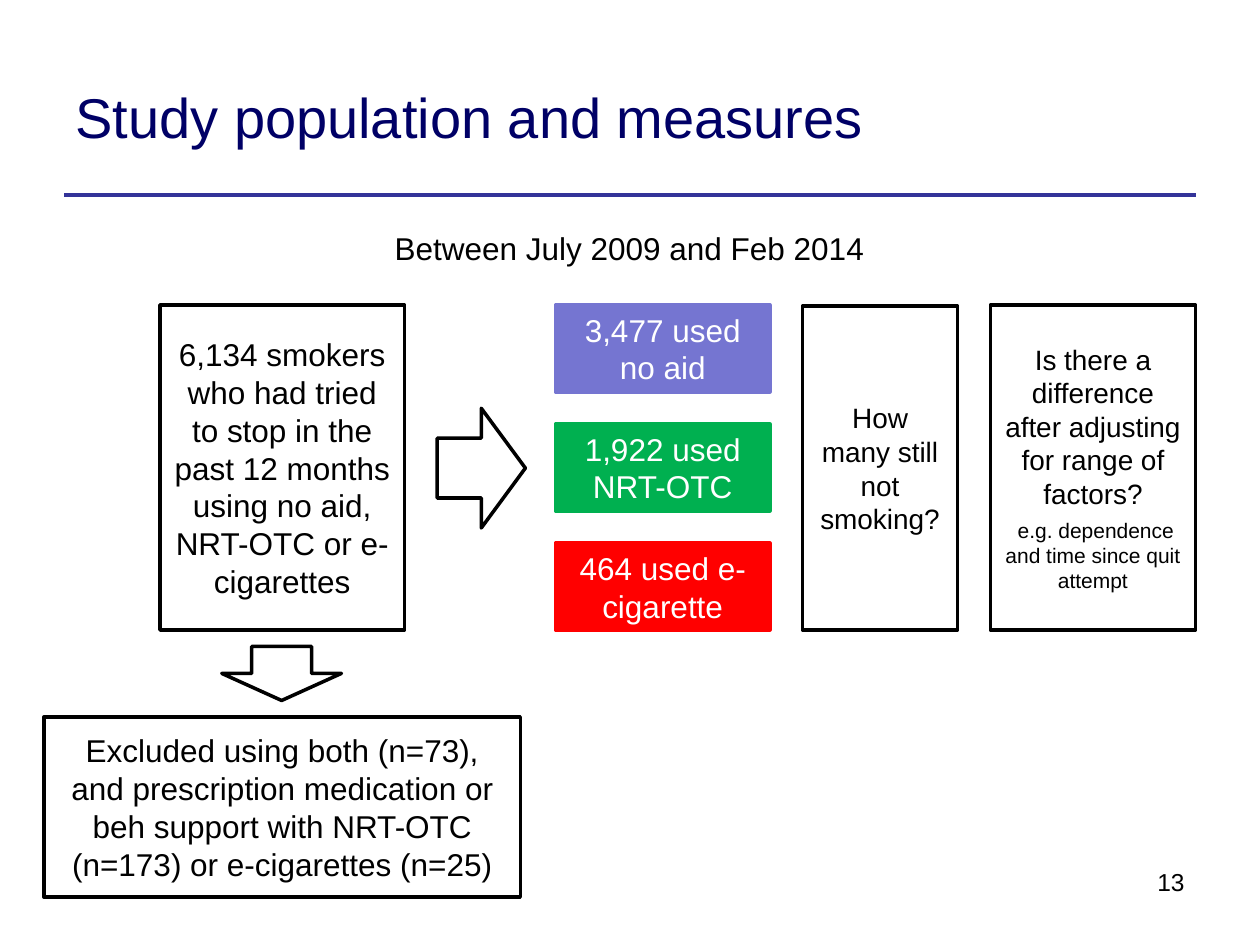
import pptx
import pptx.dml.color
import pptx.enum.shapes
import pptx.enum.text
import pptx.oxml.ns
import pptx.util
from lxml import etree

Inches = pptx.util.Inches
Pt = pptx.util.Pt
RGBColor = pptx.dml.color.RGBColor
MSO_SHAPE = pptx.enum.shapes.MSO_SHAPE
ALIGN = pptx.enum.text.PP_ALIGN
ANCHOR = pptx.enum.text.MSO_ANCHOR

BLACK = RGBColor(0x00, 0x00, 0x00)
WHITE = RGBColor(0xFF, 0xFF, 0xFF)
NAVY = RGBColor(0x00, 0x00, 0x66)
RULE_BLUE = RGBColor(0x33, 0x33, 0x99)
LILAC = RGBColor(0x75, 0x75, 0xD1)
GREEN = RGBColor(0x00, 0xB0, 0x50)
RED = RGBColor(0xFF, 0x00, 0x00)

TOP = 2.42
GROUP_PITCH = 0.945


def style_paragraph(paragraph, text, size, color, align):
    """Fill one paragraph and set its font."""
    paragraph.text = text
    paragraph.alignment = align
    paragraph.font.name = "Arial"
    paragraph.font.size = Pt(size)
    paragraph.font.color.rgb = color


def add_label(slide, place, text, size, color=BLACK, align=ALIGN.LEFT, anchor=ANCHOR.TOP):
    """Add a wrapped text box with one paragraph."""
    label = slide.shapes.add_textbox(*map(Inches, place))
    label.text_frame.word_wrap = True
    label.text_frame.vertical_anchor = anchor
    style_paragraph(label.text_frame.paragraphs[0], text, size, color, align)


def add_outlined(slide, preset, place, fill=WHITE, line=BLACK):
    """Add a filled preset shape with a two-point outline."""
    outlined = slide.shapes.add_shape(preset, *map(Inches, place))
    outlined.shadow.inherit = False
    outlined.fill.solid()
    outlined.fill.fore_color.rgb = fill
    outlined.line.color.rgb = line
    outlined.line.width = Pt(2)
    return outlined


def add_box(slide, place, text, size=18, fill=WHITE, line=BLACK, color=BLACK):
    """Add a rectangle with centred text and return it."""
    box = add_outlined(slide, MSO_SHAPE.RECTANGLE, place, fill, line)
    box.text_frame.word_wrap = True
    box.text_frame.vertical_anchor = ANCHOR.MIDDLE
    style_paragraph(box.text_frame.paragraphs[0], text, size, color, ALIGN.CENTER)
    return box


def add_title_rule(slide):
    """Draw the line under the title."""
    rule = slide.shapes.add_connector(
        pptx.enum.shapes.MSO_CONNECTOR.STRAIGHT,
        Inches(0.51), Inches(1.55), Inches(9.49), Inches(1.55))
    rule.line.color.rgb = RULE_BLUE
    rule.line.width = Pt(2.25)
    etree.SubElement(rule._element.spPr, pptx.oxml.ns.qn("a:effectLst"))


def main():
    """Build the study population slide."""
    deck = pptx.Presentation()
    deck.slide_width, deck.slide_height = Inches(10), Inches(7.5)
    slide = deck.slides.add_slide(deck.slide_layouts[6])

    add_title_rule(slide)
    add_label(slide, (0.5, 0.3, 7.89, 1.25), "Study population and measures", 32,
              NAVY, anchor=ANCHOR.MIDDLE)
    add_label(slide, (6.73, 6.83, 2.77, 0.52), "13", 14, align=ALIGN.RIGHT)
    add_label(slide, (1.06, 1.77, 7.87, 0.4), "Between July 2009 and Feb 2014", 18,
              align=ALIGN.CENTER)

    add_box(slide, (1.27, TOP, 1.94, 2.58),
            "6,134 smokers who had tried to stop in the past 12 months "
            "using no aid, NRT-OTC or e-cigarettes")
    groups = [("3,477 used no aid", LILAC), ("1,922 used NRT-OTC", GREEN),
              ("464 used e-cigarette", RED)]
    for row, (group, color) in enumerate(groups):
        add_box(slide, (4.41, TOP + row * GROUP_PITCH, 1.7, 0.69), group,
                fill=color, line=color, color=WHITE)

    add_box(slide, (6.37, 2.43, 1.23, 2.57), "How many still not smoking?", 16)
    adjusted = add_box(slide, (7.86, TOP, 1.63, 2.58),
                       "Is there a difference after adjusting for range of factors?", 16)
    factors = adjusted.text_frame.add_paragraph()
    style_paragraph(factors, " e.g. dependence and time since quit attempt", 12,
                    BLACK, ALIGN.CENTER)
    factors.space_before = Pt(4)

    add_outlined(slide, MSO_SHAPE.RIGHT_ARROW, (3.47, 3.24, 0.7, 0.95))
    exclusion_arrow = add_outlined(slide, MSO_SHAPE.RIGHT_ARROW, (2.02, 4.87, 0.43, 0.95))
    exclusion_arrow.rotation = 90
    add_box(slide, (0.35, 5.69, 3.78, 1.43),
            "Excluded using both (n=73), and prescription medication or beh support "
            "with NRT-OTC (n=173) or e-cigarettes (n=25)")

    deck.save("out.pptx")


if __name__ == "__main__":
    main()
